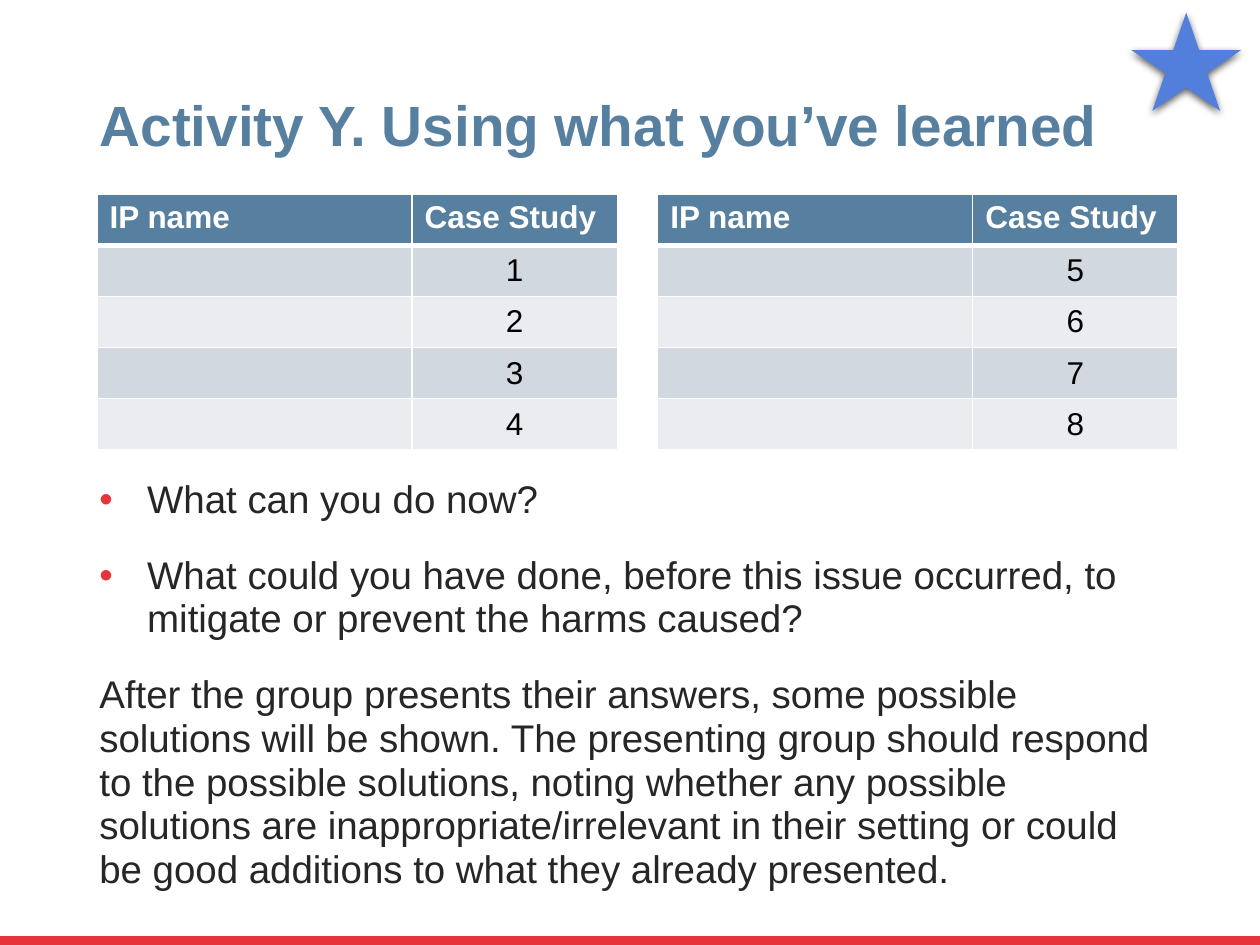
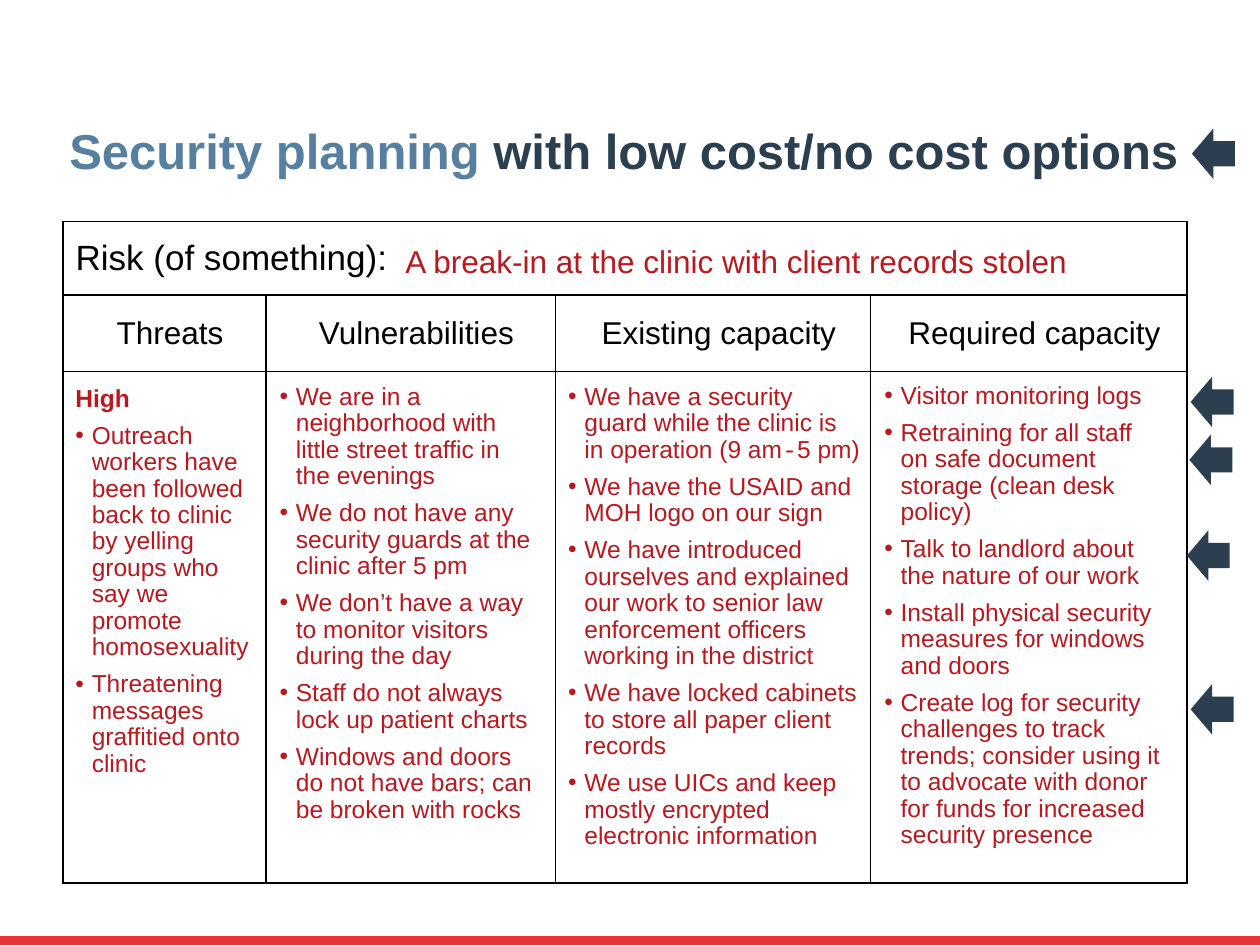
from lxml.etree import SubElement
from pptx import Presentation
from pptx.dml.color import RGBColor
from pptx.enum.shapes import MSO_SHAPE as SHAPE
from pptx.enum.text import MSO_ANCHOR as ANCHOR, MSO_AUTO_SIZE as AUTO, PP_ALIGN as ALIGN
from pptx.oxml.ns import qn
from pptx.util import Inches, Pt

FONT = "Arial"
BLUE, NAVY, RED, CRIMSON = "577F9F", "2C3F50", "E73439", "BC171D"
BLACK, WHITE, INK, STAR_BLUE = "000000", "FFFFFF", "262626", "527FDB"
STRIPES = ["D1D8DF", "EAECF0"]

# Activity slide
ACTIVITY_TITLE = [("Activity Y. Using what you’ve learned", BLUE)]
CASE_HEADER = ["IP name", "Case Study"]
CASE_TABLES = [(0.77, [1, 2, 3, 4]), (5.22, [5, 6, 7, 8])]  # left, case numbers
CASE_WIDTHS = [2.5, 1.63]
QUESTIONS = [
    "What can you do now?",
    "What could you have done, before this issue occurred, to mitigate or prevent "
    "the harms caused?",
]
INSTRUCTION = (
    "After the group presents their answers, some possible solutions will be shown. "
    "The presenting group should respond to the possible solutions, noting whether any "
    "possible solutions are inappropriate/irrelevant in their setting or could be good "
    "additions to what they already presented."
)

# Security planning slide
PLAN_TITLE = [("Security planning ", BLUE), ("with low cost/no cost options", NAVY)]
RISK_LABEL = "Risk (of something):"
RISK = "A break-in at the clinic with client records stolen"
PLAN_HEADER = ["Threats", "Vulnerabilities", "Existing capacity", "Required capacity"]
PLAN_WIDTHS = [1.61, 2.3, 2.5, 2.51]
PLAN_HEIGHTS = [0.58, 0.61, 4.06]
THREAT_LEVEL = "High"
PLAN_COLUMNS = [  # box, bullet items; a tuple item holds (text, font) runs
    ((0.5, 2.99, 1.58, 3.26), [
        "Outreach workers have been followed back to clinic by yelling groups who say we "
        "promote homosexuality",
        "Threatening messages graffitied onto clinic",
    ]),
    ((2.12, 3, 2.22, 3.85), [
        "We are in a neighborhood with little street traffic in the evenings",
        "We do not have any security guards at the clinic after 5 pm",
        "We don’t have a way to monitor visitors during the day",
        "Staff do not always lock up patient charts",
        "Windows and doors do not have bars; can be broken with rocks",
    ]),
    ((4.41, 3, 2.52, 3.83), [
        (("We have a security guard while the clinic is in operation (9 am", FONT),
         ("-", "Courier New"), ("5 pm)", FONT)),
        "We have the USAID and MOH logo on our sign",
        "We have introduced ourselves and explained our work to senior law enforcement "
        "officers working in the district",
        "We have locked cabinets to store all paper client records",
        "We use UICs and keep mostly encrypted electronic information",
    ]),
    ((6.92, 2.99, 2.39, 3.83), [
        "Visitor monitoring logs",
        "Retraining for all staff on safe document storage (clean desk policy)",
        "Talk to landlord about the nature of our work",
        "Install physical security measures for windows and doors",
        "Create log for security challenges to track trends; consider using it to advocate "
        "with donor for funds for increased security presence",
    ]),
]
ARROWS = [(9.46, 1.02), (9.45, 2.99), (9.44, 3.45), (9.42, 4.21), (9.45, 5.43)]


def rgb(color):
    return RGBColor.from_string(color)


def inches(*lengths):
    return [Inches(v) for v in lengths]


def add_run(p, text, size, color, bold=False, font=FONT):
    r = p.add_run()
    r.text = text
    r.font.name, r.font.size, r.font.bold = font, Pt(size), bold
    r.font.color.rgb = rgb(color)


def next_paragraph(tf):
    """Return the empty first paragraph, or a new one after it."""
    first = tf.paragraphs[0]
    return tf.add_paragraph() if first.runs else first


def set_bullet(p, color, indent):
    pPr = p._p.get_or_add_pPr()
    pPr.set("marL", str(Inches(indent)))
    pPr.set("indent", str(-Inches(indent)))
    SubElement(SubElement(pPr, qn("a:buClr")), qn("a:srgbClr"), val=color)
    SubElement(pPr, qn("a:buFont"), typeface=FONT)
    SubElement(pPr, qn("a:buChar"), char="•")


def space(p, line, before, first):
    p.line_spacing = line
    p.space_before = Pt(0 if first else before)


def add_text_box(slide, box):
    tf = slide.shapes.add_textbox(*inches(*box)).text_frame
    tf.word_wrap = True
    return tf


def add_solid(slide, shape, box, color):
    sp = slide.shapes.add_shape(shape, *inches(*box))
    sp.shadow.inherit = False
    sp.fill.solid()
    sp.fill.fore_color.rgb = rgb(color)
    sp.line.fill.background()
    return sp


def add_slide(prs, title_runs, title_box, title_size):
    slide = prs.slides.add_slide(prs.slide_layouts[5])
    add_solid(slide, SHAPE.RECTANGLE, (0, 7.43, 10, 0.08), RED)
    title = slide.shapes.title
    title.left, title.top, title.width, title.height = inches(*title_box)
    tf = title.text_frame
    tf.word_wrap, tf.auto_size, tf.vertical_anchor = True, AUTO.NONE, ANCHOR.BOTTOM
    p = tf.paragraphs[0]
    p.alignment, p.line_spacing = ALIGN.LEFT, 0.9
    for text, color in title_runs:
        add_run(p, text, title_size, color, bold=True)
    return slide


def add_grid(slide, left, top, widths, heights):
    frame = slide.shapes.add_table(
        len(heights), len(widths), *inches(left, top, sum(widths), sum(heights)))
    table = frame.table
    for col, width in zip(table.columns, widths):
        col.width = Inches(width)
    for row, height in zip(table.rows, heights):
        row.height = Inches(height)
    return table


def set_borders(cell, color, **widths):
    """Draw 1 pt cell borders; widths such as B=3 override a side."""
    tcPr = cell._tc.get_or_add_tcPr()
    for side in "LRTB":
        ln = SubElement(tcPr, qn("a:ln" + side), w=str(Pt(widths.get(side, 1))))
        SubElement(SubElement(ln, qn("a:solidFill")), qn("a:srgbClr"), val=color)


def add_case_table(slide, left, cases):
    rows = [CASE_HEADER] + [["", str(n)] for n in cases]
    table = add_grid(slide, left, 1.54, CASE_WIDTHS, [0.406] * len(rows))
    for i, row in enumerate(rows):
        for j, text in enumerate(row):
            cell = table.cell(i, j)
            sides = {"B": 3} if i == 0 else {"T": 3} if i == 1 else {}
            set_borders(cell, WHITE, **sides)
            cell.fill.solid()
            cell.fill.fore_color.rgb = rgb(STRIPES[(i - 1) % 2] if i else BLUE)
            if not text:
                continue
            p = cell.text_frame.paragraphs[0]
            add_run(p, text, 18, BLACK if i else WHITE, bold=i == 0)
            if i:
                p.alignment = ALIGN.CENTER
                cell.vertical_anchor = ANCHOR.MIDDLE


def add_star(slide):
    star = add_solid(slide, SHAPE.STAR_5_POINT, (8.98, 0.1, 0.87, 0.78), STAR_BLUE)
    effects = star._element.spPr.find(qn("a:effectLst"))
    shadow = SubElement(effects, qn("a:outerShdw"), blurRad=str(Pt(4.5)),
                        dist=str(Pt(1.5)), dir="5400000", rotWithShape="0")
    color = SubElement(shadow, qn("a:srgbClr"), val=BLACK)
    SubElement(color, qn("a:alpha"), val="63000")


def add_plan_table(slide):
    table = add_grid(slide, 0.5, 1.76, PLAN_WIDTHS, PLAN_HEIGHTS)
    table.first_row = table.horz_banding = False
    for cell in table.iter_cells():
        set_borders(cell, BLACK)
        cell.fill.background()
        cell.vertical_anchor = ANCHOR.MIDDLE
        cell.margin_left, cell.margin_right = inches(0.1, 0.01)
        cell.margin_top = cell.margin_bottom = Inches(0.04)
    table.cell(0, 0).merge(table.cell(0, 3))
    add_run(table.cell(0, 0).text_frame.paragraphs[0], RISK_LABEL, 20, BLACK)
    for j, text in enumerate(PLAN_HEADER):
        p = table.cell(1, j).text_frame.paragraphs[0]
        p.alignment = ALIGN.CENTER
        add_run(p, text, 18, BLACK)


def add_plan_bullets(tf, items):
    for item in items:
        first = not tf.paragraphs[0].runs
        p = next_paragraph(tf)
        set_bullet(p, CRIMSON, 0.13)
        space(p, 0.9, 6, first)
        for text, font in [(item, FONT)] if isinstance(item, str) else item:
            add_run(p, text, 14, CRIMSON, font=font)


def build_activity(prs):
    slide = add_slide(prs, ACTIVITY_TITLE, (0.69, 0.44, 8.62, 0.87), 32.4)
    tf = add_text_box(slide, (0.69, 3.75, 8.62, 3.7))
    for i, text in enumerate(QUESTIONS + [INSTRUCTION]):
        p = next_paragraph(tf)
        if text in QUESTIONS:
            set_bullet(p, RED, 0.38)
        space(p, 0.95, 18, i == 0)
        add_run(p, text, 22, INK)
    for left, cases in CASE_TABLES:
        add_case_table(slide, left, cases)
    add_star(slide)


def build_plan(prs):
    slide = add_slide(prs, PLAN_TITLE, (0.45, 0.61, 9.11, 0.87), 28)
    add_plan_table(slide)
    risk = add_text_box(slide, (3.12, 1.87, 5.54, 0.4))
    add_run(risk.paragraphs[0], RISK, 18, CRIMSON)
    for header, (box, items) in zip(PLAN_HEADER, PLAN_COLUMNS):
        tf = add_text_box(slide, box)
        if header == "Threats":
            add_run(tf.paragraphs[0], THREAT_LEVEL, 14, CRIMSON, bold=True)
        add_plan_bullets(tf, items)
    for left, top in ARROWS:
        add_solid(slide, SHAPE.LEFT_ARROW, (left, top, 0.34, 0.4), NAVY)


def main():
    prs = Presentation()
    prs.slide_width, prs.slide_height = inches(10, 7.5)
    build_activity(prs)
    build_plan(prs)
    prs.save("out.pptx")


if __name__ == "__main__":
    main()
